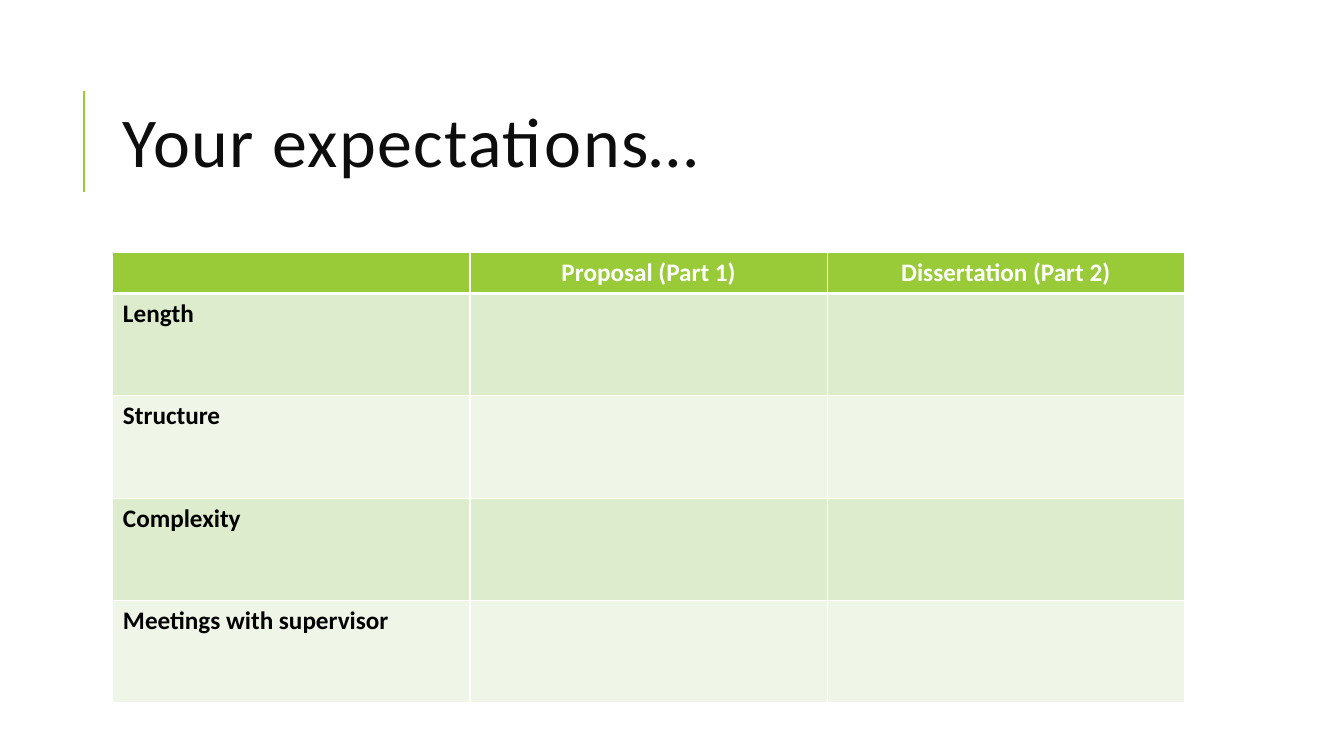
from dataclasses import dataclass

from lxml.etree import SubElement
from pptx import Presentation
from pptx.dml.color import RGBColor
from pptx.enum.shapes import MSO_CONNECTOR
from pptx.enum.text import MSO_ANCHOR, PP_ALIGN
from pptx.oxml.ns import qn
from pptx.slide import Slide
from pptx.table import _Cell
from pptx.text.text import _Paragraph, _Run
from pptx.util import Pt

FONT = "Calibri"
GREEN = "99CB38"
WHITE = "FFFFFF"
BANDS = ("DEECCE", "EFF6E8")
LEFT, WIDTH = 80.64, 765.36
HEADS = ("", "Proposal (Part 1)", "Dissertation (Part 2)")


@dataclass
class Row:
    texts: tuple[str, ...]
    height: float
    fill: str
    ink: str
    align: PP_ALIGN
    top: float = 1
    bottom: float = 1


def color(code: str) -> RGBColor:
    return RGBColor.from_string(code)


def add_run(para: _Paragraph, text: str, size: float, ink: str, bold: bool = False) -> _Run:
    run = para.add_run()
    run.text = text
    run.font.name = FONT
    run.font.size = Pt(size)
    run.font.bold = bold
    run.font.color.rgb = color(ink)
    return run


def add_edges(cell: _Cell, top: float, bottom: float) -> None:
    props = cell._tc.get_or_add_tcPr()
    edges = {"lnL": 1, "lnR": 1, "lnT": top, "lnB": bottom}
    for place, (tag, width) in enumerate(edges.items()):
        line = SubElement(props, qn(f"a:{tag}"), w=str(Pt(width)))
        fill = SubElement(line, qn("a:solidFill"))
        SubElement(fill, qn("a:srgbClr"), val=WHITE)
        props.insert(place, line)


def draw_title(slide: Slide) -> None:
    # Accent line
    line = slide.shapes.add_connector(
        MSO_CONNECTOR.STRAIGHT, Pt(60), Pt(136.8), Pt(60), Pt(64.8))
    line.line.color.rgb = color(GREEN)
    line.line.width = Pt(1.5)
    SubElement(line._element.spPr, qn("a:effectLst"))

    # Heading text
    box = slide.shapes.add_textbox(Pt(LEFT), Pt(46.08), Pt(WIDTH), Pt(118.08))
    frame = box.text_frame
    frame.word_wrap = True
    frame.vertical_anchor = MSO_ANCHOR.MIDDLE
    para = frame.paragraphs[0]
    para.line_spacing = 0.8
    run = add_run(para, "Your expectations…", 50, "0D0D0D")
    run._r.get_or_add_rPr().set("spc", "100")


def draw_table(slide: Slide, rows: list[Row]) -> None:
    height = sum(row.height for row in rows)
    table = slide.shapes.add_table(
        len(rows), len(HEADS), Pt(LEFT), Pt(180.5), Pt(WIDTH), Pt(height)).table
    table.horz_banding = False
    for col in table.columns:
        col.width = Pt(WIDTH / len(HEADS))
    for r, row in enumerate(rows):
        table.rows[r].height = Pt(row.height)
        for c, text in enumerate(row.texts):
            cell = table.cell(r, c)
            cell.fill.solid()
            cell.fill.fore_color.rgb = color(row.fill)
            add_edges(cell, row.top, row.bottom)
            if text:
                para = cell.text_frame.paragraphs[0]
                para.alignment = row.align
                add_run(para, text, 18, row.ink, True)


def main() -> None:
    deck = Presentation()
    deck.slide_width, deck.slide_height = Pt(960), Pt(540)
    slide = deck.slides.add_slide(deck.slide_layouts[6])
    draw_title(slide)

    # Header row, then banded topic rows
    topics = ("Length", "Structure", "Complexity", "Meetings with supervisor")
    rows = [Row(HEADS, 29.2, GREEN, WHITE, PP_ALIGN.CENTER, bottom=3)]
    for i, topic in enumerate(topics):
        rows.append(Row((topic, "", ""), 73.1, BANDS[i % 2], "000000",
                        PP_ALIGN.LEFT, top=1 if i else 3))
    draw_table(slide, rows)
    deck.save("out.pptx")


if __name__ == "__main__":
    main()
